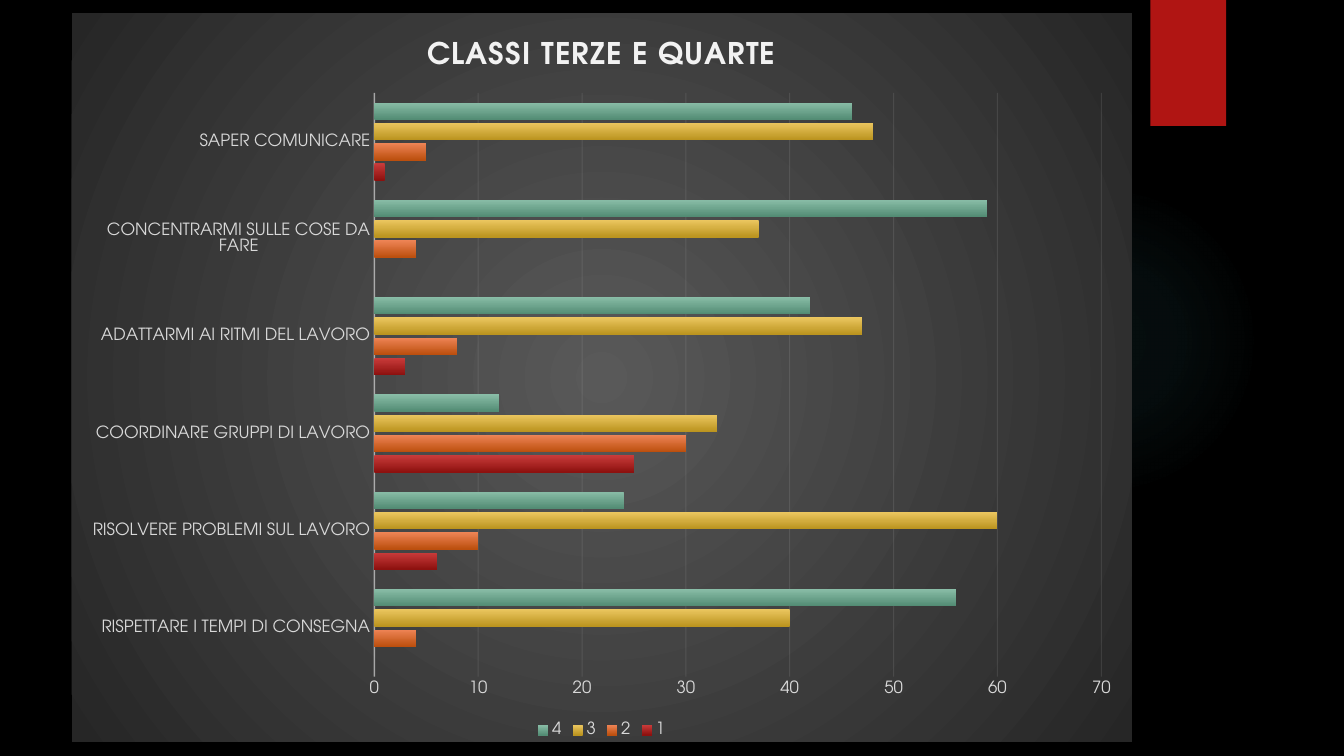
from lxml import etree
from pptx import Presentation
from pptx.chart.data import CategoryChartData
from pptx.dml.color import RGBColor
from pptx.enum.chart import XL_CHART_TYPE as Kind, XL_LEGEND_POSITION as Side
from pptx.enum.chart import XL_TICK_MARK as Tick
from pptx.enum.shapes import MSO_SHAPE as Form
from pptx.oxml import parse_xml
from pptx.oxml.ns import nsdecls, qn
from pptx.util import Pt

BLACK = RGBColor(0x00, 0x00, 0x00)
WHITE = RGBColor(0xFF, 0xFF, 0xFF)
PALE = RGBColor(0xF2, 0xF2, 0xF2)
GRAY = RGBColor(0xD9, 0xD9, 0xD9)
RED = RGBColor(0xB0, 0x15, 0x13)
TEAL = RGBColor(0x50, 0xB9, 0xC1)
CORE, RIM = RGBColor(0x59, 0x59, 0x59), RGBColor(0x26, 0x26, 0x26)
FACE = "TeX Gyre Adventor"


def paint(props, stops, radial=False):
    """Replace the empty fill with a gradient; stops are (place, colour, opacity)."""
    marks = "".join(
        f'<a:gs pos="{at * 1000}"><a:srgbClr val="{tone}">'
        f'<a:alpha val="{alpha * 1000}"/></a:srgbClr></a:gs>'
        for at, tone, alpha in stops)
    course = '<a:lin ang="5400000" scaled="0"/>'
    if radial:
        course = ('<a:path path="circle"><a:fillToRect l="50000" t="50000" '
                  'r="50000" b="50000"/></a:path>')
    fill = parse_xml(f'<a:gradFill {nsdecls("a")} rotWithShape="1">'
                     f'<a:gsLst>{marks}</a:gsLst>{course}</a:gradFill>')
    props.replace(props.find(qn("a:noFill")), fill)


def style(font, size, color, bold=False):
    font.name, font.size, font.bold = FACE, Pt(size), bold
    font.color.rgb = color


deck = Presentation()
deck.slide_width, deck.slide_height = Pt(960), Pt(540)
slide = deck.slides.add_slide(deck.slide_layouts[6])
slide.background.fill.solid()
slide.background.fill.fore_color.rgb = BLACK

# Soft glow
glow = slide.shapes.add_shape(Form.OVAL, Pt(677.5), Pt(131.8), Pt(221.8), Pt(221.8))
glow.shadow.inherit = False
glow.line.fill.background()
glow.fill.background()
paint(glow._element.spPr, [(0, TEAL, 7), (36, TEAL, 6), (69, TEAL, 0)], True)

# Red tab with its shadow
tab = slide.shapes.add_shape(Form.RECTANGLE, Pt(821.8), 0, Pt(54), Pt(90))
tab.fill.solid()
tab.fill.fore_color.rgb = RED
tab.line.fill.background()
tab.shadow.inherit = False
tab._element.spPr.find(qn("a:effectLst")).append(parse_xml(
    f'<a:outerShdw {nsdecls("a")} blurRad="{Pt(3)}" dist="{Pt(2)}" dir="5400000" '
    'rotWithShape="0"><a:srgbClr val="000000"><a:alpha val="45000"/></a:srgbClr>'
    '</a:outerShdw>'))

# Chart values
data = CategoryChartData()
data.categories = [
    "RISPETTARE I TEMPI DI CONSEGNA", "RISOLVERE PROBLEMI SUL LAVORO",
    "COORDINARE GRUPPI DI LAVORO", "ADATTARMI AI RITMI DEL LAVORO",
    "CONCENTRARMI SULLE COSE DA FARE", "SAPER COMUNICARE"]
rows = [
    ("1", (0, 6, 25, 3, 0, 1), RGBColor(0xC9, 0x3B, 0x3A), RGBColor(0x8D, 0x11, 0x0F)),
    ("2", (4, 10, 30, 8, 4, 5), RGBColor(0xEE, 0x84, 0x55), RGBColor(0xBC, 0x4F, 0x0E)),
    ("3", (40, 60, 33, 47, 37, 48), RGBColor(0xEB, 0xC6, 0x5F), RGBColor(0xBB, 0x94, 0x1F)),
    ("4", (56, 24, 12, 42, 59, 46), RGBColor(0x89, 0xBD, 0xA7), RGBColor(0x53, 0x8C, 0x74)),
]
for name, vals, _, _ in rows:
    data.add_series(name, vals)
chart = slide.shapes.add_chart(
    Kind.BAR_CLUSTERED, Pt(51.1), Pt(9.4), Pt(757.4), Pt(520.6), data).chart
style(chart.font, 10, WHITE)

# Chart ground
ground = parse_xml(f'<c:spPr {nsdecls("c", "a")}><a:noFill/>'
                   '<a:ln><a:noFill/></a:ln></c:spPr>')
chart._chartSpace.find(qn("c:chart")).addnext(ground)
paint(ground, [(0, CORE, 100), (100, RIM, 100)], True)

# Title
chart.has_title = True
chart.chart_title.include_in_layout = False
head = chart.chart_title.text_frame
head.text = "CLASSI TERZE E QUARTE"
run = head.paragraphs[0].runs[0]
style(run.font, 21.3, PALE, True)
run.font._element.set("spc", "100")

# Bars
plot = chart.plots[0]
plot.gap_width, plot.overlap = 115, -20
plot.vary_by_categories = False
for bar, (_, _, light, dark) in zip(plot.series, rows):
    bar.format.fill.background()
    paint(bar.format._element.spPr if hasattr(bar.format, "_element")
          else bar._element.find(qn("c:spPr")), [(0, light, 100), (100, dark, 100)])

# Axes and grid
cat, val = chart.category_axis, chart.value_axis
for axis in (cat, val):
    axis.major_tick_mark = axis.minor_tick_mark = Tick.NONE
    style(axis.tick_labels.font, 12, GRAY)
val.minimum_scale, val.maximum_scale, val.major_unit = 0, 70, 10
val.format.line.fill.background()
val.has_major_gridlines = True
for part, width, alpha in ((cat, 1, 54), (val.major_gridlines, 0.75, 10)):
    line = part.format.line
    line.width = Pt(width)
    line.color.rgb = PALE
    owner = cat._element if part is cat else val._element.find(qn("c:majorGridlines"))
    tone = owner.find(qn("c:spPr")).find(".//" + qn("a:srgbClr"))
    etree.SubElement(tone, qn("a:alpha")).set("val", str(alpha * 1000))

# Legend
chart.has_legend = True
chart.legend.position = Side.BOTTOM
chart.legend.include_in_layout = False
style(chart.legend.font, 12, GRAY)

deck.save("out.pptx")
